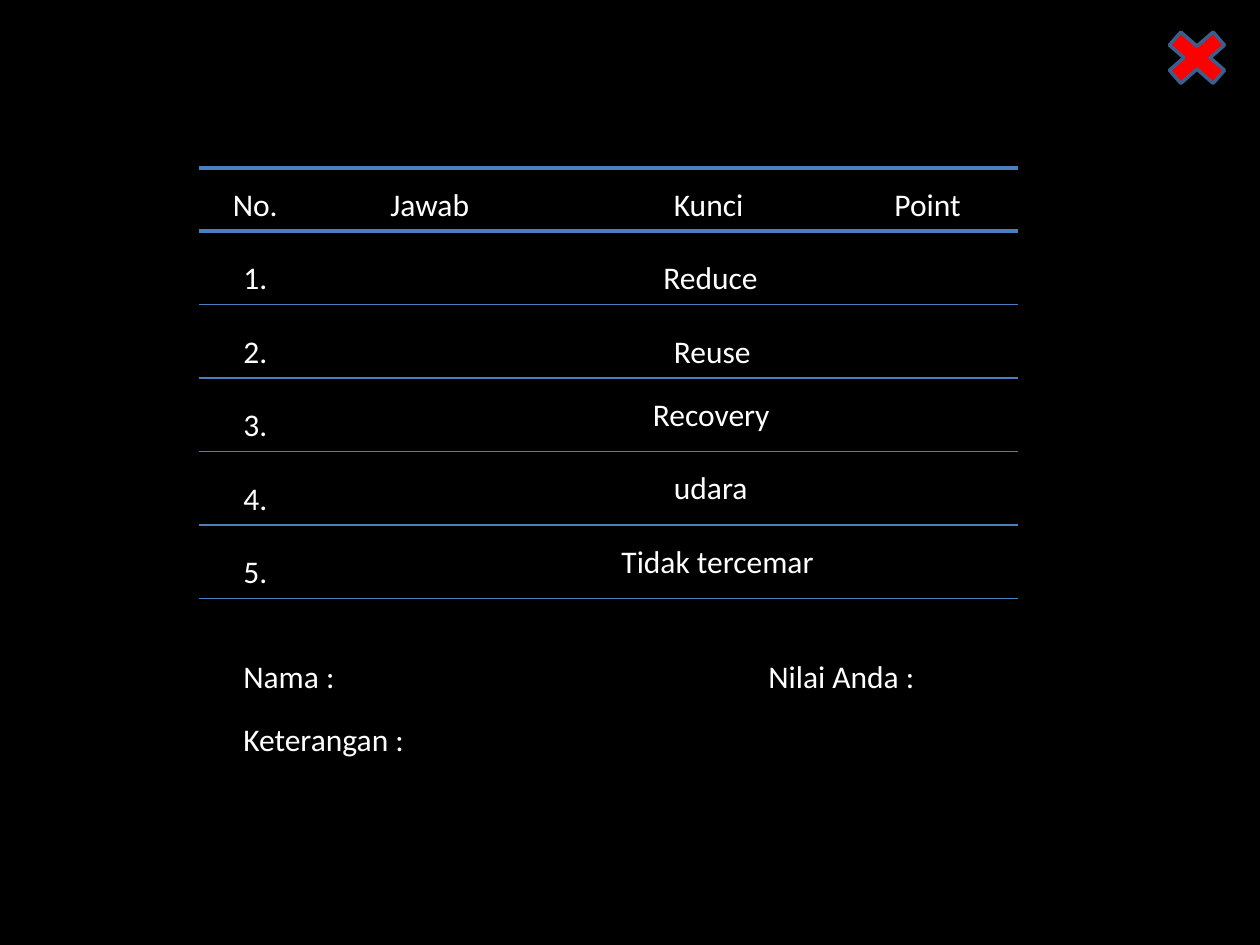
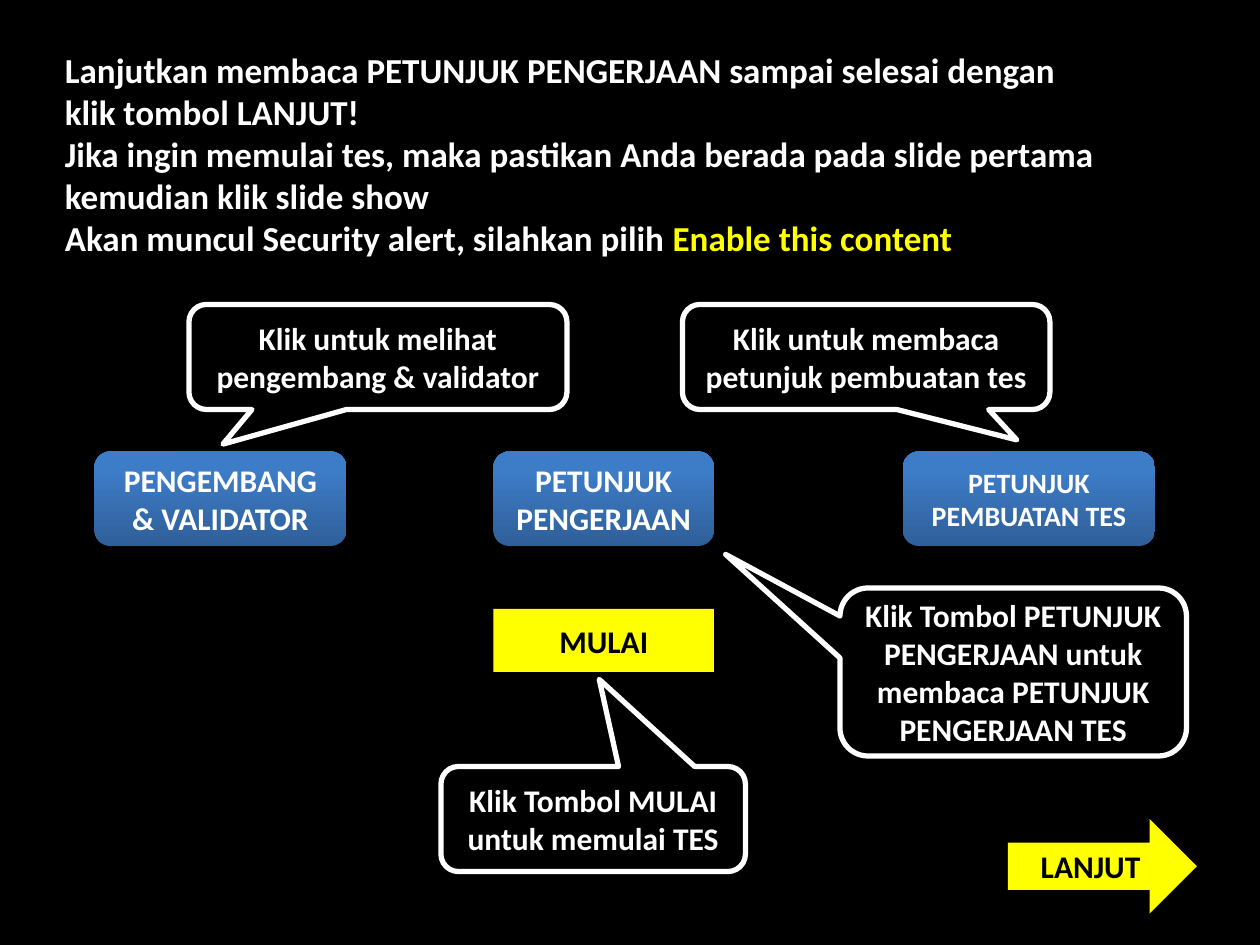
from lxml import etree
from pptx import Presentation
from pptx import util as u
from pptx.dml.color import RGBColor
from pptx.enum import shapes, text
from pptx.oxml import ns

BLACK = RGBColor(0x00, 0x00, 0x00)
WHITE = RGBColor(0xFF, 0xFF, 0xFF)
YELLOW = RGBColor(0xFF, 0xFF, 0x00)
RED = RGBColor(0xFF, 0x00, 0x00)
RULE_BLUE = RGBColor(0x4B, 0x7E, 0xBC)
CROSS_EDGE = RGBColor(0x3A, 0x5F, 0x8C)
BUTTON_DARK = RGBColor(0x2F, 0x5F, 0x99)
BUTTON_LIGHT = RGBColor(0x3D, 0x7C, 0xC7)
FONT = "Calibri"
SLIDE_WIDTH, SLIDE_HEIGHT = u.Inches(10), u.Inches(7.5)
COLUMNS, ROWS = 120, 90
LINE_HEIGHT = 4.8

SCORE_LEFT, SCORE_RIGHT = 19, 97
FIRST_ROW, ROW_STEP = 24, 7
HEADINGS = [("No.", 21, 7), ("Jawab", 36, 10), ("Kunci", 63, 10), ("Point", 84, 9)]
KEYS = [
    ("Reduce", 62, 24, 14),
    ("Reuse", 63, 31, 11),
    ("Recovery", 61, 37, 17),
    ("udara", 63, 44, 14),
    ("Tidak tercemar", 58, 51, 21),
]
RESULTS = [("Nilai Anda :", 72, 62, 17), ("Keterangan :", 22, 68, 19), ("Nama :", 22, 62, 13)]

INTRODUCTION = [
    [("Lanjutkan membaca PETUNJUK PENGERJAAN sampai selesai dengan klik tombol LANJUT!", WHITE)],
    [("Jika ingin memulai tes, maka pastikan Anda berada pada slide pertama "
      "kemudian klik slide show", WHITE)],
    [("Akan muncul Security alert, silahkan pilih ", WHITE), ("Enable this content", YELLOW)],
]
BUTTONS = [
    ("PETUNJUK PENGERJAAN", 47, 21, 18),
    ("PENGEMBANG & VALIDATOR", 9, 24, 18),
    ("PETUNJUK PEMBUATAN TES", 86, 24, 16),
]
CALLOUTS = [
    ("Klik Tombol PETUNJUK PENGERJAAN untuk membaca PETUNJUK PENGERJAAN TES",
     (80, 56, 33, 16), (-0.83, -0.7)),
    ("Klik Tombol MULAI untuk memulai TES", (42, 73, 29, 10), (0.02, -1.33)),
    ("Klik untuk melihat pengembang & validator", (18, 29, 36, 10), (-0.41, 0.83)),
    ("Klik untuk membaca petunjuk pembuatan tes", (65, 29, 35, 10), (0.41, 0.79)),
]


def across(columns):
    return int(SLIDE_WIDTH * columns / COLUMNS)


def down(rows):
    return int(SLIDE_HEIGHT * rows / ROWS)


def place(box):
    left, top, width, height = box
    return across(left), down(top), across(width), down(height)


def add_black_slide(presentation):
    slide = presentation.slides.add_slide(presentation.slide_layouts[6])
    slide.background.fill.solid()
    slide.background.fill.fore_color.rgb = BLACK
    return slide


def add_run(paragraph, words, colour, size, bold):
    run = paragraph.add_run()
    run.text = words
    run.font.name = FONT
    run.font.size = u.Pt(size)
    run.font.bold = bold
    run.font.color.rgb = colour


def add_text(slide, paragraphs, box, size=18, bold=False):
    frame = slide.shapes.add_textbox(*place(box)).text_frame
    frame.word_wrap = True
    frame.auto_size = text.MSO_AUTO_SIZE.SHAPE_TO_FIT_TEXT
    for index, runs in enumerate(paragraphs):
        paragraph = frame.add_paragraph() if index else frame.paragraphs[0]
        for words, colour in runs:
            add_run(paragraph, words, colour, size, bold)


def add_label(slide, words, left, top, width):
    add_text(slide, [[(words, WHITE)]], (left, top, width, LINE_HEIGHT))


def add_rule(slide, row, weight):
    rule = slide.shapes.add_connector(
        shapes.MSO_CONNECTOR.STRAIGHT,
        across(SCORE_LEFT), down(row), across(SCORE_RIGHT), down(row))
    rule.line.color.rgb = RULE_BLUE
    rule.line.width = u.Pt(weight)
    etree.SubElement(rule._element.spPr, ns.qn("a:effectLst"))


def add_figure(slide, kind, box, fill, edge=None, weight=0):
    shape = slide.shapes.add_shape(kind, *place(box))
    shape.shadow.inherit = False
    shape.fill.solid()
    shape.fill.fore_color.rgb = fill
    if edge is None:
        shape.line.fill.background()
    else:
        shape.line.color.rgb = edge
        shape.line.width = u.Pt(weight)
    return shape


def write_centred(shape, words, colour, size=18):
    frame = shape.text_frame
    frame.word_wrap = True
    frame.vertical_anchor = text.MSO_ANCHOR.MIDDLE
    paragraph = frame.paragraphs[0]
    paragraph.alignment = text.PP_ALIGN.CENTER
    add_run(paragraph, words, colour, size, True)


def add_button(slide, words, left, width, size):
    button = add_figure(slide, shapes.MSO_SHAPE.ROUNDED_RECTANGLE,
                        (left, 43, width, 9), BUTTON_LIGHT)
    button.fill.gradient()
    button.fill.gradient_angle = 90
    dark, light = button.fill.gradient_stops
    dark.color.rgb, dark.position = BUTTON_DARK, 0
    light.color.rgb, light.position = BUTTON_LIGHT, 0.8
    write_centred(button, words, WHITE, size)


def add_callout(slide, words, box, pointer):
    callout = add_figure(slide, shapes.MSO_SHAPE.ROUNDED_RECTANGULAR_CALLOUT,
                         box, BLACK, WHITE, 3)
    callout.adjustments[0], callout.adjustments[1] = pointer
    write_centred(callout, words, WHITE)


def add_yellow_control(slide, kind, words, box):
    write_centred(add_figure(slide, kind, box, YELLOW), words, BLACK)


def build_score_slide(presentation):
    slide = add_black_slide(presentation)
    for row in (16, 22):
        add_rule(slide, row, 1.75)
    for index in range(len(KEYS)):
        add_rule(slide, 29 + index * ROW_STEP, 0.75)
    for words, left, width in HEADINGS:
        add_label(slide, words, left, 17, width)
    for index in range(len(KEYS)):
        add_label(slide, f"{index + 1}.", 22, FIRST_ROW + index * ROW_STEP, 6)
    for label in KEYS + RESULTS:
        add_label(slide, *label)
    add_figure(slide, shapes.MSO_SHAPE.MATH_MULTIPLY, (110, 2, 8, 7), RED, CROSS_EDGE, 2)


def build_guide_slide(presentation):
    slide = add_black_slide(presentation)
    add_yellow_control(slide, shapes.MSO_SHAPE.RIGHT_ARROW, "LANJUT", (96, 78, 18, 9))
    add_yellow_control(slide, shapes.MSO_SHAPE.RECTANGLE, "MULAI", (47, 58, 21, 6))
    add_text(slide, INTRODUCTION, (5, 4, 101, 29.5), size=20, bold=True)
    for button in BUTTONS:
        add_button(slide, *button)
    for callout in CALLOUTS:
        add_callout(slide, *callout)


def main():
    presentation = Presentation()
    presentation.slide_width, presentation.slide_height = SLIDE_WIDTH, SLIDE_HEIGHT
    build_score_slide(presentation)
    build_guide_slide(presentation)
    presentation.save("out.pptx")


if __name__ == "__main__":
    main()
